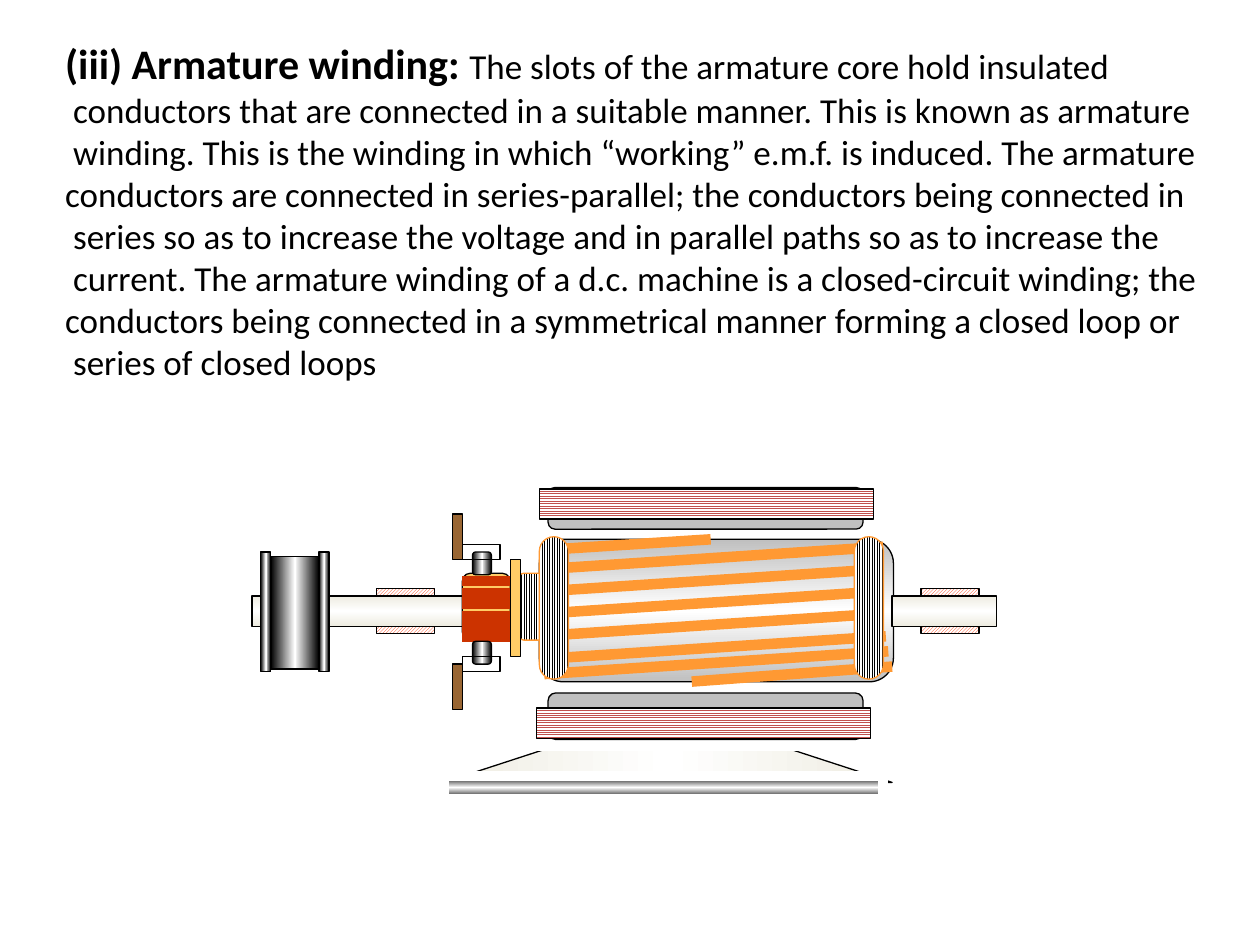
from copy import deepcopy

from lxml.etree import SubElement
from pptx import Presentation
from pptx.dml.color import RGBColor
from pptx.enum.dml import MSO_PATTERN
from pptx.enum.shapes import MSO_CONNECTOR, MSO_SHAPE
from pptx.enum.text import MSO_AUTO_SIZE
from pptx.oxml.ns import qn
from pptx.util import Pt

COLOURS = {
    "black": "000000", "white": "FFFFFF", "silver": "C0C0C0", "shaft": "EEECE1",
    "copper": "FF9933", "segment": "CC3300", "brass": "FFCC66", "holder": "996633",
    "bearing": "FF3300", "coil": "C0504D",
}
HEADING = "(iii) Armature winding: "
LINES = [
    "The slots of the armature core hold insulated",
    " conductors that are connected in a suitable manner. This is known as armature",
    " winding. This is the winding in which “working” e.m.f. is induced. The armature",
    "conductors are connected in series-parallel; the conductors being connected in",
    " series so as to increase the voltage and in parallel paths so as to increase the",
    " current. The armature winding of a d.c. machine is a closed-circuit winding; the",
    "conductors being connected in a symmetrical manner forming a closed loop or",
    " series of closed loops",
]


def colour(name):
    return RGBColor.from_string(COLOURS[name])


def outline(shape, name="black", width=0.75):
    shape.shadow.inherit = False
    if name is None:
        shape.line.fill.background()
    else:
        shape.line.color.rgb = colour(name)
        shape.line.width = Pt(width)


def shade(shape, edge, angle):
    """Fill with a gradient that is white in the middle."""
    shape.fill.gradient()
    shape.fill.gradient_angle = angle
    stops = shape._element.spPr.find(".//" + qn("a:gsLst"))
    middle = deepcopy(stops[0])
    middle.set("pos", "50000")
    stops.insert(1, middle)
    for stop, name in zip(shape.fill.gradient_stops, (edge, "white", edge)):
        stop.color.rgb = colour(name)


def add_block(page, box, fill=None, line="black", width=0.75, corner=None):
    kind = MSO_SHAPE.RECTANGLE if corner is None else MSO_SHAPE.ROUNDED_RECTANGLE
    block = page.shapes.add_shape(kind, *map(Pt, box))
    if corner is not None:
        block.adjustments[0] = corner
    if fill is None:
        block.fill.background()
    else:
        block.fill.solid()
        block.fill.fore_color.rgb = colour(fill)
    outline(block, line, width)
    return block


def add_shaded(page, box, edge, angle, **style):
    shade(add_block(page, box, **style), edge, angle)


def add_hatched(page, box, pattern, ink, **style):
    block = add_block(page, box, **style)
    block.fill.patterned()
    block.fill.pattern = pattern
    block.fill.fore_color.rgb = colour(ink)
    block.fill.back_color.rgb = colour("white")


def add_bar(page, ends, name):
    bar = page.shapes.add_connector(MSO_CONNECTOR.STRAIGHT, *map(Pt, ends))
    bar.line.color.rgb = colour(name)
    bar.line.width = Pt(6)
    SubElement(bar._element.spPr, qn("a:effectLst"))


def add_text(page):
    box = page.shapes.add_textbox(Pt(30.2), Pt(18), Pt(671.8), Pt(259.2))
    frame = box.text_frame
    frame.word_wrap = False
    frame.auto_size = MSO_AUTO_SIZE.SHAPE_TO_FIT_TEXT
    for index, line in enumerate(LINES):
        para = frame.add_paragraph() if index else frame.paragraphs[0]
        para.font.name = "Calibri"
        para.font.color.rgb = colour("black")
        if index == 0:
            span = para.add_run()
            span.text = HEADING
            span.font.size = Pt(24)
            span.font.bold = True
        else:
            para.font.size = Pt(20)
        span = para.add_run()
        span.text = line
        span.font.size = Pt(20)


def add_base(page):
    builder = page.shapes.build_freeform(Pt(253.4), Pt(447.1))
    corners = [(317.5, 426.2), (445.7, 426.2), (509.8, 447.1)]
    builder.add_line_segments([(Pt(x), Pt(y)) for x, y in corners])
    foot = builder.convert_to_shape()
    shade(foot, "shaft", 0)
    outline(foot)
    add_shaded(page, (253.4, 443.5, 251.3, 13), "black", 90, line="white", width=6)
    add_bar(page, (291.6, 426.2, 477.4, 426.2), "white")


def add_bearings(page):
    for left, gap_left in ((215.3, 198.7), (526.3, 515.5)):
        add_hatched(page, (left, 336.2, 33.1, 25.9),
                    MSO_PATTERN.DARK_UPWARD_DIAGONAL, "bearing")
        add_block(page, (gap_left, 340.6, 54.7, 17.3), "white", line=None)


def add_armature(page):
    add_shaded(page, (308.2, 308.2, 202.3, 81.4), "silver", 90, corner=0.167)
    windings = [(308.2, 325.4 + 12.7 * n, 504.7, 312.5 + 12.7 * n) for n in range(4)]
    windings += [(309.6, 376.6, 506.2, 363.6), (311, 385.2, 507.6, 372.2),
                 (395.3, 389.5, 509.8, 380.9), (316.8, 313.9, 406.1, 308.2)]
    for ends in windings:
        add_bar(page, ends, "copper")
    for left, width in ((144, 164.2), (509.8, 59.8)):
        add_shaded(page, (left, 340.6, width, 17.3), "shaft", 90)


def add_commutator(page):
    add_block(page, (264.2, 327.6, 27.4, 38.2), "brass", corner=0.167)
    for y in (331.9, 339.1, 344.9, 352.1, 357.8, 363.6):
        add_bar(page, (264.2, y, 291.6, y), "segment")
    ends = [((296.6, 327.6, 16.6, 38.2), 0.167)]
    ends += [((left, 306.7, 16.6, 81.4), 0.5) for left in (308.2, 488.2)]
    for box, corner in ends:
        add_hatched(page, box, MSO_PATTERN.NARROW_VERTICAL, "black",
                    line="copper", corner=corner)
    add_block(page, (291.6, 319.7, 5.8, 55.4), "brass")


def add_brushes(page):
    for brush, holder, arm in ((366.5, 379.4, 375.1), (315.4, 293.8, 311)):
        add_shaded(page, (270, brush, 10.8, 13), "black", 0, corner=0.167)
        add_block(page, (258.5, holder, 5.8, 25.9), "holder")
        add_block(page, (264.2, arm, 21.6, 8.6))


def add_poles(page):
    for top, height in ((278.6, 23.8), (396, 26.6)):
        add_block(page, (313.2, top, 180, height), "silver", corner=0.167)
    for left, top in ((306.7, 404.6), (308.2, 279.4)):
        add_hatched(page, (left, top, 190.8, 17.3),
                    MSO_PATTERN.NARROW_HORIZONTAL, "coil")


def add_pulley(page):
    add_shaded(page, (154.8, 318.2, 27.4, 64.1), "black", 0)
    for left in (182.2, 149):
        add_shaded(page, (left, 315.4, 5.8, 68.4), "black", 0)


def main():
    """Build the armature winding slide."""
    deck = Presentation()
    deck.slide_width, deck.slide_height = Pt(720), Pt(540)
    page = deck.slides.add_slide(deck.slide_layouts[6])
    for add_part in (add_text, add_base, add_bearings, add_armature,
                     add_commutator, add_brushes, add_poles, add_pulley):
        add_part(page)
    deck.save("out.pptx")


if __name__ == "__main__":
    main()
